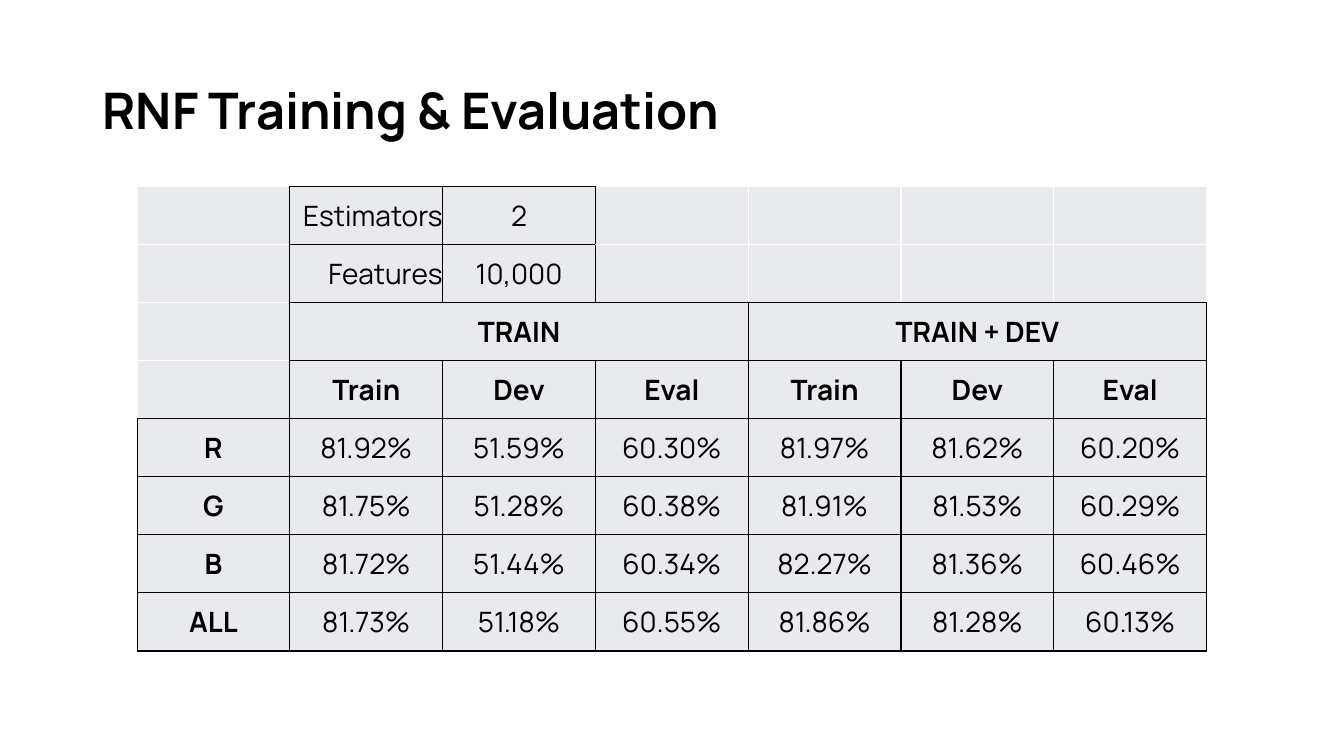
from lxml.etree import SubElement
from pptx import Presentation
from pptx.dml.color import RGBColor
from pptx.enum.text import MSO_ANCHOR, PP_ALIGN
from pptx.oxml.ns import qn
from pptx.util import Inches, Pt

THEME = {
    "font": "Manrope",
    "title_size": Pt(36),
    "table_size": Pt(20),
    "ink": "000000",
    "paper": "FFFFFF",
    "cell": "E8EAED",
}
BORDER_WIDTH = Pt(1)
SIDES = {"a:lnL": (0, -1), "a:lnR": (0, 1), "a:lnT": (-1, 0), "a:lnB": (1, 0)}

RESULTS = [
    ["", "Estimators", "2", "", "", "", ""],
    ["", "Features", "10,000", "", "", "", ""],
    ["", "TRAIN", None, None, "TRAIN + DEV", None, None],  # None continues a merged cell
    ["", "Train", "Dev", "Eval", "Train", "Dev", "Eval"],
    ["R", "81.92%", "51.59%", "60.30%", "81.97%", "81.62%", "60.20%"],
    ["G", "81.75%", "51.28%", "60.38%", "81.91%", "81.53%", "60.29%"],
    ["B", "81.72%", "51.44%", "60.34%", "82.27%", "81.36%", "60.46%"],
    ["ALL", "81.73%", "51.18%", "60.55%", "81.86%", "81.28%", "60.13%"],
]
ROWS, COLUMNS = len(RESULTS), len(RESULTS[0])
GROUP_ROW, GROUP_STARTS, GROUP_WIDTH = 2, (1, 4), 3
HEADING_ROWS = (2, 3)
PARAMETER_ROWS = (0, 1)


def style_paragraph(paragraph, size, bold):
    paragraph.font.name = THEME["font"]
    paragraph.font.size = size
    paragraph.font.bold = bold
    paragraph.font.color.rgb = RGBColor.from_string(THEME["ink"])


def is_outlined(row, column):
    """Tell whether the position lies in the table and is not an empty cell."""
    return 0 <= row < ROWS and 0 <= column < COLUMNS and RESULTS[row][column] != ""


presentation = Presentation()
presentation.slide_width = Inches(13.33)
presentation.slide_height = Inches(7.5)
slide = presentation.slides.add_slide(presentation.slide_layouts[6])

title = slide.shapes.add_textbox(Inches(0.92), Inches(0.4), Inches(11.5), Inches(1.45))
title.text_frame.word_wrap = True
title.text_frame.vertical_anchor = MSO_ANCHOR.MIDDLE
paragraph = title.text_frame.paragraphs[0]
paragraph.text = "RNF Training & Evaluation"
paragraph.line_spacing = 0.9
style_paragraph(paragraph, THEME["title_size"], True)

table = slide.shapes.add_table(
    ROWS, COLUMNS, Inches(1.36), Inches(1.85), Inches(10.61), Inches(4.61)
).table
table.first_row = False
table.horz_banding = False

for row, texts in enumerate(RESULTS):
    for column, text in enumerate(texts):
        cell = table.cell(row, column)
        cell.vertical_anchor = MSO_ANCHOR.MIDDLE
        cell.margin_left = cell.margin_right = cell.margin_top = cell.margin_bottom = 0
        paragraph = cell.text_frame.paragraphs[0]
        paragraph.text = text or ""
        is_parameter_name = row in PARAMETER_ROWS and column == 1
        paragraph.alignment = PP_ALIGN.RIGHT if is_parameter_name else PP_ALIGN.CENTER
        style_paragraph(paragraph, THEME["table_size"], row in HEADING_ROWS or column == 0)

        properties = cell._tc.get_or_add_tcPr()
        for side, (down, across) in SIDES.items():
            dark = is_outlined(row, column) or is_outlined(row + down, column + across)
            border = SubElement(properties, qn(side), w=str(BORDER_WIDTH))
            fill = SubElement(border, qn("a:solidFill"))
            SubElement(fill, qn("a:srgbClr"), val=THEME["ink" if dark else "paper"])
        cell.fill.solid()
        cell.fill.fore_color.rgb = RGBColor.from_string(THEME["cell"])

for start in GROUP_STARTS:
    table.cell(GROUP_ROW, start).merge(table.cell(GROUP_ROW, start + GROUP_WIDTH - 1))

presentation.save("out.pptx")
